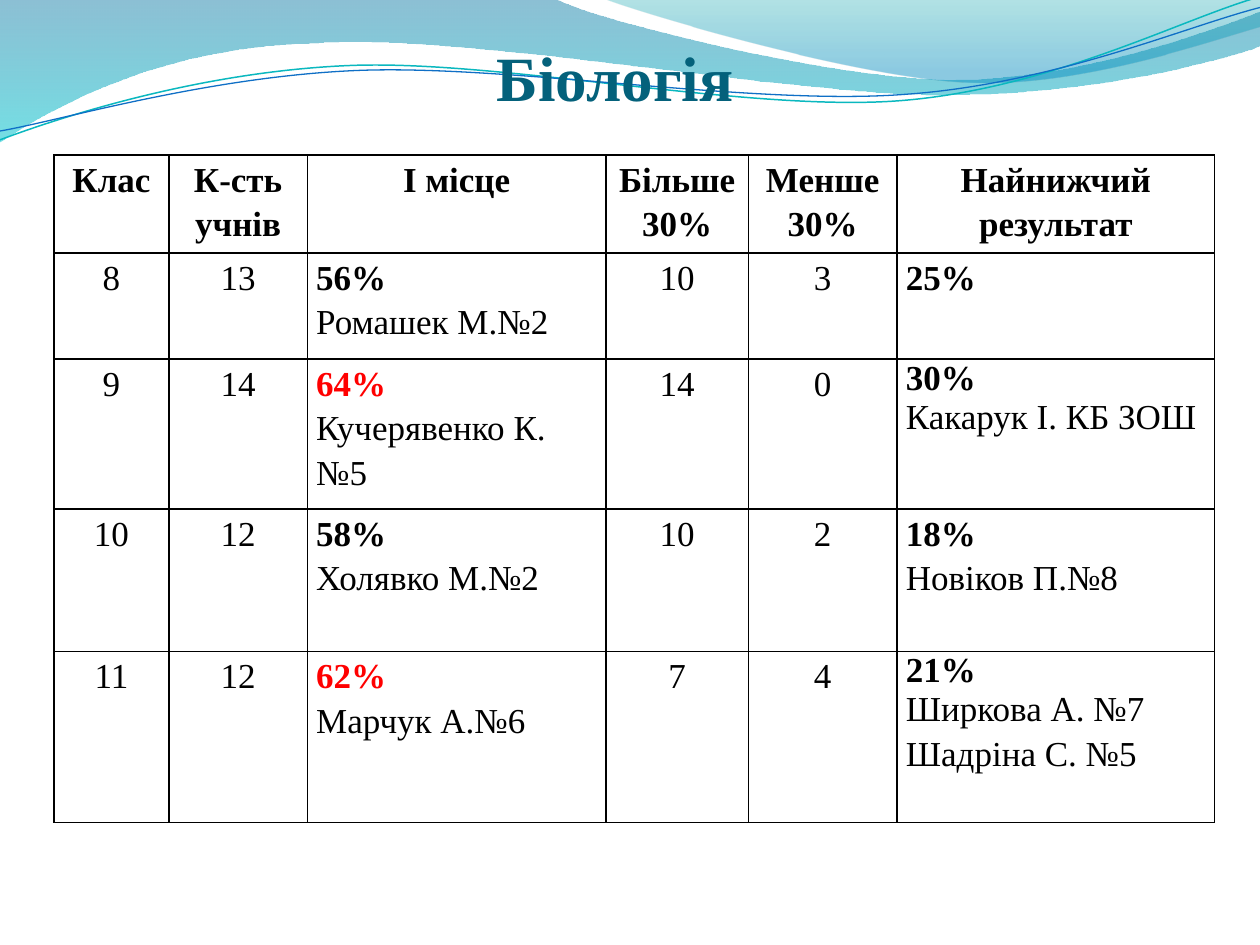
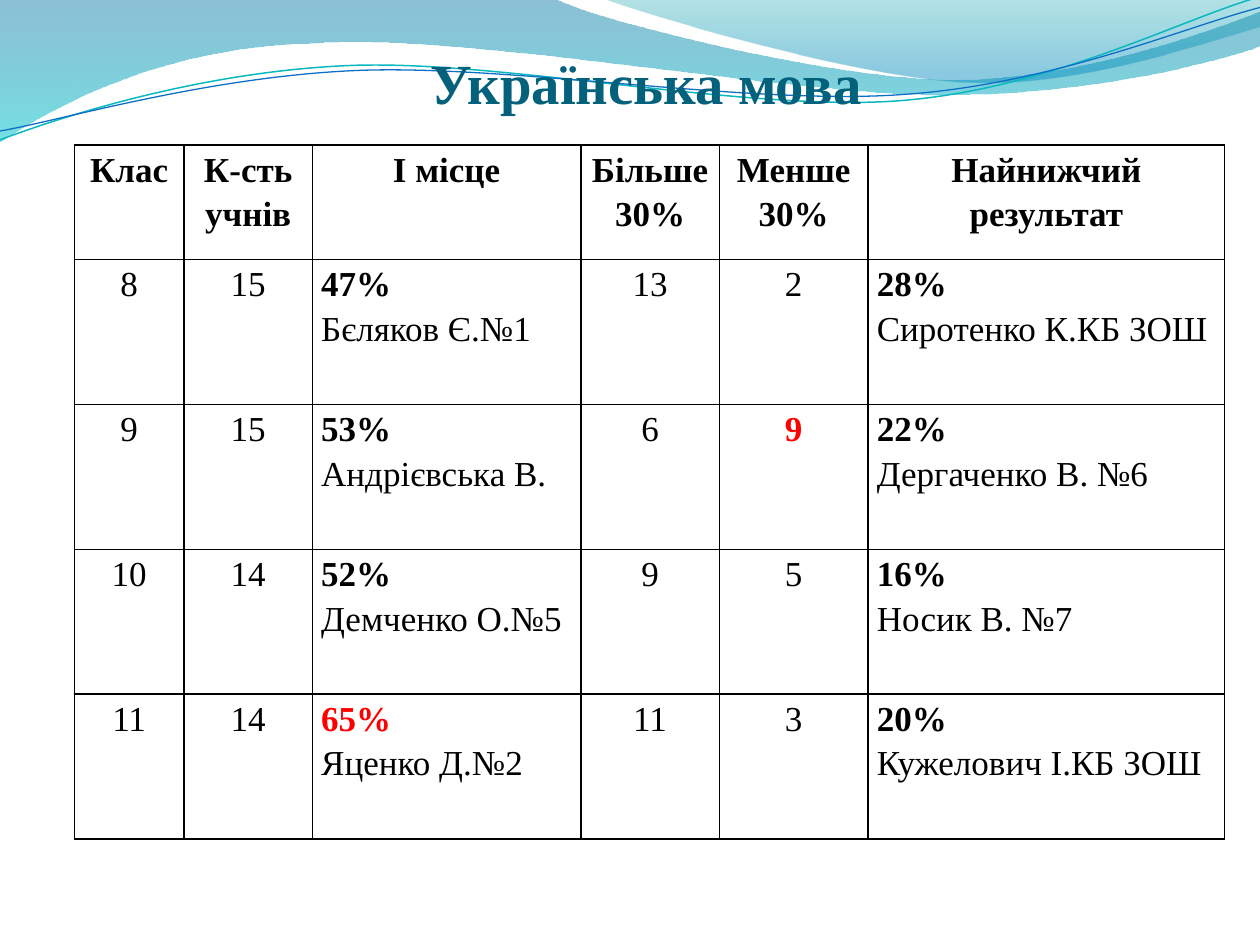
from math import cos, radians, sin

from lxml.etree import SubElement
from pptx import Presentation
from pptx.dml.color import RGBColor
from pptx.enum.text import MSO_ANCHOR, MSO_AUTO_SIZE, PP_ALIGN
from pptx.oxml import parse_xml
from pptx.oxml.ns import nsdecls, qn
from pptx.util import Inches, Pt

COLOURS = {
    "title": "04617B", "text": "000000", "record": "FF0000", "border": "000000",
    "band_top": "0074A1", "band_bottom": "00C6CF",
    "corner_top": "00A1A9", "corner_bottom": "008BBF",
    "wave_teal": "0AB8BF", "wave_blue": "0F6FC6",
}
FONT = "Times New Roman"
WAVE_TILT = 357.3

deck = Presentation()
deck.slide_width, deck.slide_height = Inches(10), Inches(7.5)
CELL = deck.slide_width / 10  # the slide is a grid of 10 columns by 7.5 rows


def draw_outline(page, steps, closed, tilt=0, centre=(0, 0)):
    """Draw (x, y) line ends and (x1, y1, x2, y2, x, y) Bézier curves, tilted about centre."""
    turn = radians(-tilt)
    points = []
    for step in steps:
        for x, y in zip(step[::2], step[1::2]):
            dx, dy = x - centre[0], y - centre[1]
            points.append(((centre[0] + dx * cos(turn) - dy * sin(turn)) * CELL,
                           (centre[1] + dx * sin(turn) + dy * cos(turn)) * CELL))
    builder = page.shapes.build_freeform(*points[0], scale=1)
    builder.add_line_segments(points[1:], close=closed)
    shape = builder.convert_to_shape()
    shape.shadow.inherit = False
    shape.rotation = tilt
    corners = iter(list(shape.element.iter(qn("a:lnTo"))))
    for step in steps[1:]:
        corner = next(corners)
        if len(step) == 6:
            corner.tag = qn("a:cubicBezTo")
            for _ in range(2):
                following = next(corners)
                corner.append(following[0])
                following.getparent().remove(following)
    return shape


def format_span(span, **values):
    span.font.color.rgb = RGBColor.from_string(values.pop("colour"))
    for name, value in {"name": FONT, "bold": True, **values}.items():
        setattr(span.font, name, value)


# Each band: outline, then gradient stops as (position %, colour, opacity %)
bands = [
    ([(0, 0), (4.4, -0.01), (4.76, 0.17, 6.64, 0.63, 7.58, 0.63),
      (8.53, 0.63, 9.58, 0.26, 10, 0.09), (10.01, 0.36),
      (9.83, 0.44, 8.7, 0.76, 7.46, 0.75), (6.22, 0.75, 3.82, 0.28, 2.57, 0.34),
      (1.29, 0.36, 0.46, 0.83, -0.01, 1.13), (0, 0)],
     [(0, "band_top", 45), (100, "band_bottom", 55)]),
    ([(4.79, -0.01), (5.09, 0.11, 6.82, 0.62, 7.69, 0.65),
      (8.56, 0.69, 9.61, 0.32, 10, 0.21), (10, 0), (4.79, -0.01)],
     [(0, "corner_top", 30), (80, "corner_bottom", 45)]),
]
# Each wave: outline, centre of its tilt, colour, line width
wave_lines = [
    ([(0, 1.11), (0.48, 0.93, 1.58, 0.57, 2.77, 0.52), (3.95, 0.47, 5.93, 0.89, 7.13, 0.8),
      (8.33, 0.71, 9.38, 0.15, 9.98, -0.02)], (4.99, 0.57), "wave_teal", 0.85),
    ([(0, 1.04), (0.47, 0.96, 1.64, 0.61, 2.83, 0.56), (4.03, 0.51, 5.97, 0.84, 7.17, 0.75),
      (8.36, 0.67, 9.41, 0.21, 10, 0.06)], (5, 0.59), "wave_blue", 0.75),
]

header = ["Клас", "К-сть учнів", "І місце", "Більше\n30%", "Менше 30%", "Найнижчий результат"]
NAME_COLUMNS = (2, 5)

# "records" are (row, column) cells in red; "tight" counts single-spaced lines of a cell
subjects = [
    {"title": "Біологія", "size": 36, "title_box": (1.61, 0.36, 6.54, 0.55),
     "corner": (0.43, 1.23),
     "columns": [0.91, 1.1, 2.37, 1.13, 1.18, 2.52],
     "rows": [0.78, 0.84, 1.19, 1.13, 1.36],
     "records": {(2, 2), (4, 2)}, "tight": {(2, 5): 2, (4, 5): 2},
     "results": [
         ["8", "13", "56%\nРомашек М.№2", "10", "3", "25%"],
         ["9", "14", "64%\nКучерявенко К.\n№5", "14", "0", "30%\nКакарук І. КБ ЗОШ"],
         ["10", "12", "58%\nХолявко М.№2", "10", "2", "18%\nНовіков П.№8"],
         ["11", "12", "62%\nМарчук А.№6", "7", "4",
          "21%\nШиркова А. №7\nШадріна С. №5"]]},
    {"title": "Українська мова", "size": 32.4, "title_box": (0.59, 0.29, 9.08, 0.63),
     "corner": (0.59, 1.15),
     "columns": [0.87, 1.02, 2.13, 1.1, 1.18, 2.83],
     "rows": [0.91] + [1.15] * 4,
     "records": {(2, 4), (4, 2)}, "tight": {},
     "results": [
         ["8", "15", "47%\nБєляков Є.№1", "13", "2", "28%\nСиротенко К.КБ ЗОШ"],
         ["9", "15", "53%\nАндрієвська В.", "6", "9", "22%\nДергаченко В. №6"],
         ["10", "14", "52%\nДемченко О.№5", "9", "5", "16%\nНосик В. №7"],
         ["11", "14", "65%\nЯценко Д.№2", "11", "3", "20%\nКужелович І.КБ ЗОШ"]]},
]

layout = deck.slide_layouts.get_by_name("Title Only")
pages = [deck.slides.add_slide(layout) for subject in subjects]

# Waves at the top, drawn once and moved to the shared layout
decor = []
for outline, stops in bands:
    band = draw_outline(pages[0], outline, closed=True)
    band.line.fill.background()
    band.fill.gradient()
    gradient = band.element.spPr.find(qn("a:gradFill"))
    for child in list(gradient):
        gradient.remove(child)
    stop_list = SubElement(gradient, qn("a:gsLst"))
    for position, colour, opacity in stops:
        stop = SubElement(stop_list, qn("a:gs"), pos=str(position * 1000))
        tint = SubElement(stop, qn("a:srgbClr"), val=COLOURS[colour])
        SubElement(tint, qn("a:alpha"), val=str(opacity * 1000))
    SubElement(gradient, qn("a:lin"), ang="5400000", scaled="0")
    decor.append(band)
waves = []
for outline, centre, colour, width in wave_lines:
    wave = draw_outline(pages[0], outline, closed=False, tilt=WAVE_TILT, centre=centre)
    wave.fill.background()
    wave.line.color.rgb = RGBColor.from_string(COLOURS[colour])
    wave.line.width = Pt(width)
    waves.append(wave)
decor.append(pages[0].shapes.add_group_shape(waves))
for order, shape in enumerate(decor):
    layout.shapes.element.insert(2 + order, shape.element)

for page, subject in zip(pages, subjects):
    title = page.shapes.title
    for name, length in zip(("left", "top", "width", "height"), subject["title_box"]):
        setattr(title, name, round(length * CELL))
    frame = title.text_frame
    frame.text = subject["title"]
    for name, value in {"margin_left": 0, "margin_right": 0, "margin_bottom": 0,
                        "margin_top": Inches(0.05), "word_wrap": True,
                        "auto_size": MSO_AUTO_SIZE.NONE,
                        "vertical_anchor": MSO_ANCHOR.BOTTOM}.items():
        setattr(frame, name, value)
    frame.paragraphs[0].alignment = PP_ALIGN.CENTER
    format_span(frame.paragraphs[0].runs[0], size=Pt(subject["size"]), colour=COLOURS["title"])

    columns, rows = subject["columns"], subject["rows"]
    box = [round(n * CELL) for n in (*subject["corner"], sum(columns), sum(rows))]
    table = page.shapes.add_table(len(rows), len(columns), *box).table
    table.first_row = table.horz_banding = False
    for column, width in zip(table.columns, columns):
        column.width = round(width * CELL)
    for row, height in zip(table.rows, rows):
        row.height = round(height * CELL)

    for r, texts in enumerate([header] + subject["results"]):
        for c, text in enumerate(texts):
            cell = table.cell(r, c)
            cell.fill.background()
            cell.margin_left = cell.margin_right = Inches(0.07)
            cell.margin_top = cell.margin_bottom = 0
            for order, side in enumerate("LRTB"):
                cell._tc.get_or_add_tcPr().insert(order, parse_xml(
                    f'<a:ln{side} {nsdecls("a")} w="{Pt(1)}"><a:solidFill>'
                    f'<a:srgbClr val="{COLOURS["border"]}"/></a:solidFill></a:ln{side}>'))
            cell.text = text
            named = r > 0 and c in NAME_COLUMNS
            for line, para in enumerate(cell.text_frame.paragraphs):
                para.alignment = PP_ALIGN.LEFT if named else PP_ALIGN.CENTER
                para.line_spacing = 1.0 if line < subject["tight"].get((r, c), 0) else 1.15
                record = line == 0 and (r, c) in subject["records"]
                format_span(para.runs[0], size=Pt(20),
                            bold=r == 0 or record or (named and line == 0),
                            colour=COLOURS["record" if record else "text"])

deck.save("out.pptx")
